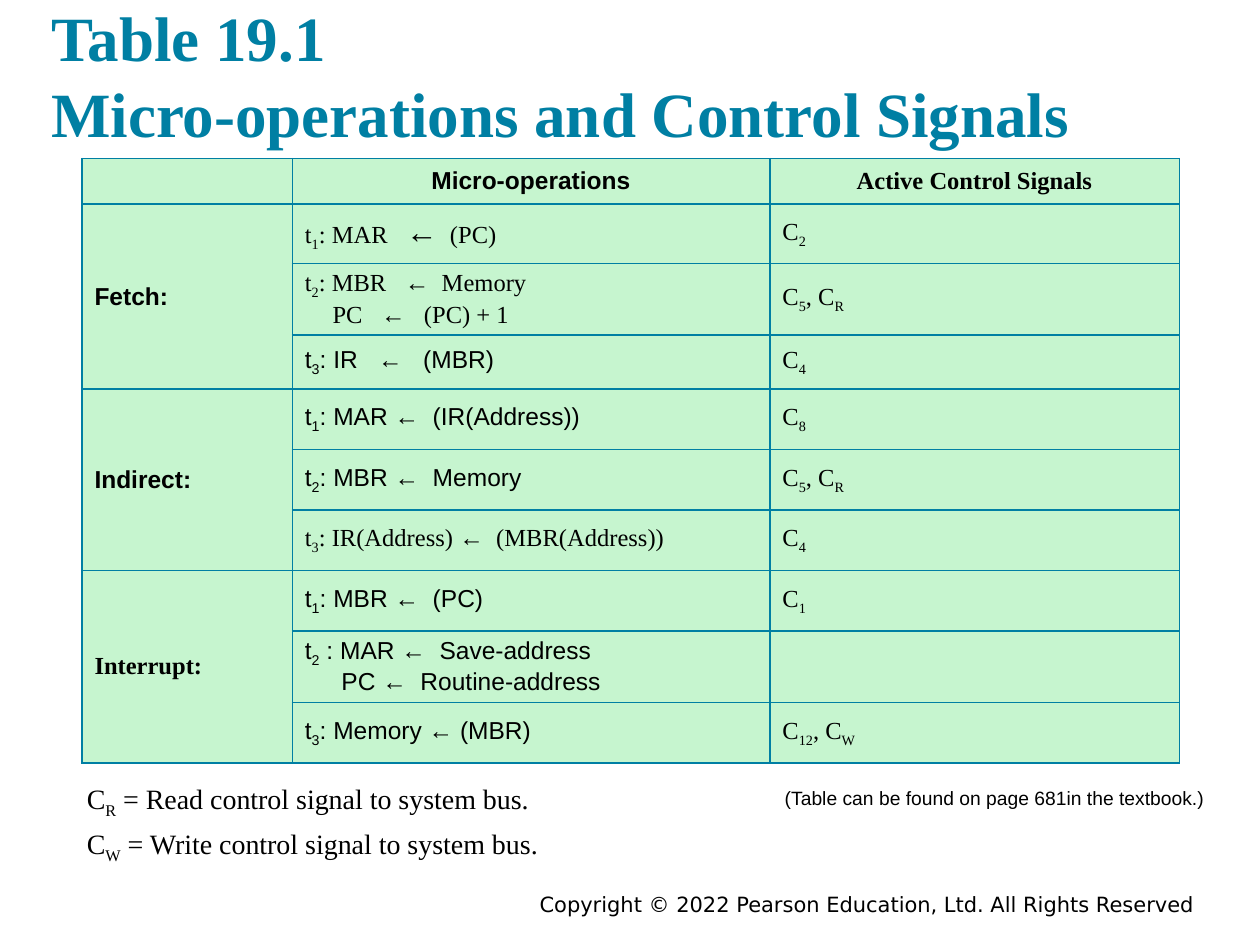
from dataclasses import dataclass

from lxml.etree import SubElement
from pptx import Presentation
from pptx.dml.color import RGBColor
from pptx.enum.text import MSO_ANCHOR as Anchor, MSO_AUTO_SIZE as AutoSize, PP_ALIGN as Align
from pptx.oxml.ns import qn
from pptx.util import Inches, Pt


@dataclass(frozen=True)
class Theme:
    """Colours, fonts and type sizes of the slide."""

    accent: str = "007FA3"
    ink: str = "000000"
    cell: str = "C6F5CF"
    serif: str = "Times New Roman"
    sans: str = "Arial"
    footer_font: str = "DejaVu Sans"
    title: int = 36
    arrow: int = 18
    key: int = 16
    body: int = 14
    footer: int = 12
    note: int = 11


THEME = Theme()
SERIF, SANS = THEME.serif, THEME.sans
ARROW = "←"
COLUMNS, ROWS = 100, 75
COLUMN_WIDTHS = (16.7, 37.9, 32.5)
ROW_HEIGHTS = (3.6, 4.7, 4.1, 4.3) + (4.8,) * 6

PHASES = (
    ("Fetch:", SANS, (
        ("t_1_: MAR   ←  (PC)", SERIF, "C_2_", {"arrow_size": THEME.arrow}),
        ("t_2_: MBR   ←  Memory\n\tPC   ←   (PC) + 1", SERIF, "C_5_, C_R_", {"hang": 2.2}),
        ("t_3_: IR   ←   (MBR)", SANS, "C_4_", {}),
    )),
    ("Indirect:", SANS, (
        ("t_1_: MAR ←  (IR(Address))", SANS, "C_8_", {}),
        ("t_2_: MBR ←  Memory", SANS, "C_5_, C_R_", {}),
        ("t_3_: IR(Address) ←  (MBR(Address))", SERIF, "C_4_", {}),
    )),
    ("Interrupt:", SERIF, (
        ("t_1_: MBR ←  (PC)", SANS, "C_1_", {}),
        ("t_2_ : MAR ←  Save-address\n\tPC ←  Routine-address", SANS, "", {"hang": 2.9}),
        ("t_3_: Memory ← (MBR)", SANS, "C_12_, C_W_", {}),
    )),
)


def grid(units):
    """Turn grid units of a tenth of an inch into a length."""
    return Inches(units / 10)


def add_run(paragraph, text, font, size, color, bold, subscript):
    """Add one formatted run to a paragraph."""
    run = paragraph.add_run()
    run.text = text
    run.font.name = font
    run.font.size = Pt(size)
    run.font.bold = bold
    run.font.color.rgb = RGBColor.from_string(color)
    if subscript:
        run.font._element.set("baseline", "-25000")


def write(frame, text, font=SERIF, size=THEME.body, color=THEME.ink, bold=False,
          align=Align.LEFT, arrow_size=None, hang=0):
    """Write lines in which underscores enclose subscripts and tabs start a hanging line."""
    for number, line in enumerate(text.split("\n")):
        paragraph = frame.add_paragraph() if number else frame.paragraphs[0]
        paragraph.alignment = align
        if line.startswith("\t"):
            properties = paragraph._p.get_or_add_pPr()
            properties.set("marL", str(grid(hang)))
            properties.set("indent", str(-grid(hang)))
        for index, part in enumerate(line.split("_")):
            before, arrow, after = part.partition(ARROW)
            pieces = ((before, font, size), (arrow, SANS, arrow_size or size), (after, font, size))
            for piece, face, points in pieces:
                if piece:
                    add_run(paragraph, piece, face, points, color, bold, index % 2 == 1)
        if not line:
            paragraph._p.get_or_add_endParaRPr().set("sz", str(size * 100))


def add_text(slide, text, left, top, width, height, inset=0.5, wrap=True,
             anchor=Anchor.TOP, **style):
    """Add a text box placed on the slide grid."""
    box = slide.shapes.add_textbox(*map(grid, (left, top, width, height)))
    frame = box.text_frame
    frame.word_wrap = wrap
    frame.auto_size = AutoSize.NONE if wrap else AutoSize.SHAPE_TO_FIT_TEXT
    frame.vertical_anchor = anchor
    frame.margin_left = frame.margin_right = grid(1)
    frame.margin_top = frame.margin_bottom = grid(inset)
    write(frame, text, **style)


def style_cell(cell):
    """Give a cell its fill, anchor and four borders."""
    cell.vertical_anchor = Anchor.MIDDLE
    properties = cell._tc.get_or_add_tcPr()
    for side in ("a:lnL", "a:lnR", "a:lnT", "a:lnB"):
        line = SubElement(properties, qn(side), w=str(Pt(1)))
        SubElement(SubElement(line, qn("a:solidFill")), qn("a:srgbClr"), val=THEME.accent)
    cell.fill.solid()
    cell.fill.fore_color.rgb = RGBColor.from_string(THEME.cell)


def add_signal_table(slide, left, top):
    """Add the table of micro-operations and control signals."""
    extent = (left, top, sum(COLUMN_WIDTHS), sum(ROW_HEIGHTS))
    table = slide.shapes.add_table(
        len(ROW_HEIGHTS), len(COLUMN_WIDTHS), *map(grid, extent)).table
    table.first_row = table.horz_banding = False
    for column, width in zip(table.columns, COLUMN_WIDTHS):
        column.width = grid(width)
    for row, height in zip(table.rows, ROW_HEIGHTS):
        row.height = grid(height)
    for cell in table.iter_cells():
        style_cell(cell)

    headings = (("", SANS), ("Micro-operations", SANS), ("Active Control Signals", SERIF))
    for column, (heading, font) in enumerate(headings):
        write(table.cell(0, column).text_frame, heading, font=font, bold=True, align=Align.CENTER)
    row = 1
    for phase, phase_font, steps in PHASES:
        table.cell(row, 0).merge(table.cell(row + len(steps) - 1, 0))
        write(table.cell(row, 0).text_frame, phase, font=phase_font, bold=True)
        for operation, font, signals, style in steps:
            write(table.cell(row, 1).text_frame, operation, font=font, **style)
            write(table.cell(row, 2).text_frame, signals)
            row += 1


def main():
    """Build the slide and save it."""
    presentation = Presentation()
    presentation.slide_width, presentation.slide_height = grid(COLUMNS), grid(ROWS)
    slide = presentation.slides.add_slide(presentation.slide_layouts[6])
    add_text(slide, "Copyright © 2022 Pearson Education, Ltd. All Rights Reserved",
             17.5, 70.3, 78.3, 2.2, font=THEME.footer_font, size=THEME.footer, align=Align.RIGHT)
    add_signal_table(slide, 6.5, 12.6)
    add_text(slide, "C_R_ = Read control signal to system bus.",
             5.9, 61.5, 37.8, 3.7, wrap=False, size=THEME.key)
    add_text(slide, "C_W_ = Write control signal to system bus.",
             5.9, 65.1, 39.1, 3.7, wrap=False, size=THEME.key)
    add_text(slide, "(Table can be found on page 681in the textbook.)",
             61.3, 61.9, 37, 2.9, wrap=False, font=SANS, size=THEME.note)
    add_text(slide, "Table 19.1\nMicro-operations and Control Signals", 3.1, 0.6, 90, 12.3,
             inset=1, anchor=Anchor.BOTTOM, size=THEME.title, color=THEME.accent, bold=True)
    presentation.save("out.pptx")


if __name__ == "__main__":
    main()
